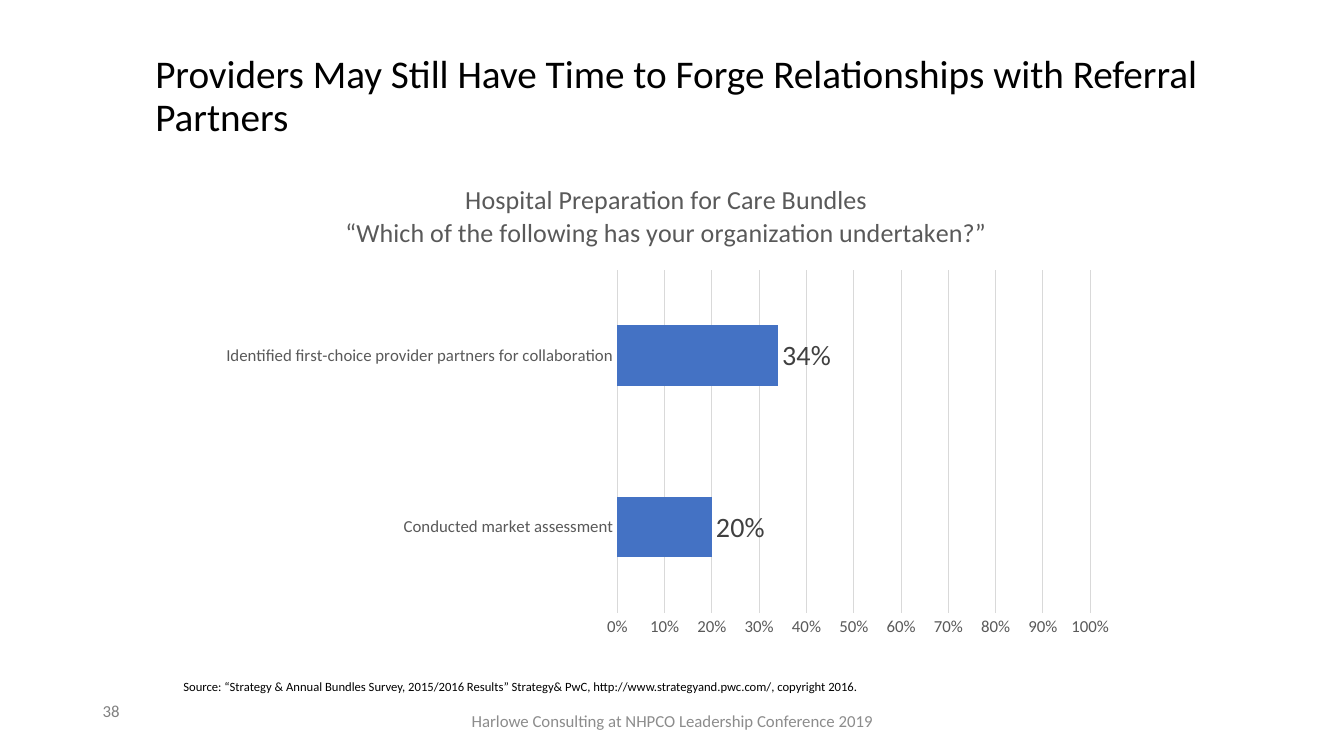
import pptx
import pptx.chart.data
import pptx.dml.color
import pptx.enum.chart
import pptx.enum.text
import pptx.oxml
import pptx.oxml.ns
import pptx.util
from pptx.util import Inches

COLORS = {
    "black": "000000",
    "bar": "4472C4",
    "grid": "D9D9D9",
    "axis": "595959",
    "label": "404040",
    "number": "808080",
    "footer": "8C8C8C",
}
PREPARATION = {
    "Conducted market assessment": 0.2,
    "Identified first-choice provider partners for collaboration": 0.34,
}
CHART_TITLE = (
    "Hospital Preparation for Care Bundles\n"
    "“Which of the following has your organization undertaken?”"
)
SOURCE = (
    "Source: “Strategy & Annual Bundles Survey, 2015/2016 Results” "
    "Strategy& PwC, http://www.strategyand.pwc.com/, copyright 2016."
)
PLOT_LAYOUT = {"x": 0.446, "y": 0.212, "w": 0.521, "h": 0.687}
ALIGN = pptx.enum.text.PP_ALIGN
ANCHOR = pptx.enum.text.MSO_ANCHOR
CHART = pptx.enum.chart


def rgb(name):
    return pptx.dml.color.RGBColor.from_string(COLORS[name])


def set_all(target, values):
    for name, value in values.items():
        setattr(target, name, value)


def style_font(font, size, color):
    set_all(font, {"name": "Calibri", "size": pptx.util.Pt(size), "bold": False})
    font.color.rgb = rgb(color)


def style_line(line, color):
    line.color.rgb = rgb(color)
    line.width = pptx.util.Pt(0.75)


def place(shape, left, top, width, height):
    set_all(shape, {"left": Inches(left), "top": Inches(top),
                    "width": Inches(width), "height": Inches(height)})


def fill_text(shape, text, size, color, align=ALIGN.LEFT, anchor=ANCHOR.TOP, spacing=1.0):
    frame = shape.text_frame
    set_all(frame, {"text": text, "word_wrap": True, "vertical_anchor": anchor,
                    "auto_size": pptx.enum.text.MSO_AUTO_SIZE.NONE})
    para = frame.paragraphs[0]
    set_all(para, {"alignment": align, "line_spacing": spacing})
    style_font(para.runs[0].font, size, color)


def add_text(page, area, text, size, color, **layout):
    box = page.shapes.add_textbox(*map(Inches, area))
    fill_text(box, text, size, color, **layout)


def set_plot_layout(chart):
    """Fix the inner plot area as fractions of the chart frame."""
    plot_area = chart.plots[0]._element.getparent()
    for old in plot_area.findall(pptx.oxml.ns.qn("c:layout")):
        plot_area.remove(old)
    values = {"layoutTarget": "inner", "xMode": "edge", "yMode": "edge", **PLOT_LAYOUT}
    parts = "".join(f'<c:{name} val="{value}"/>' for name, value in values.items())
    plot_area.insert(0, pptx.oxml.parse_xml(
        f'<c:layout {pptx.oxml.ns.nsdecls("c")}>'
        f"<c:manualLayout>{parts}</c:manualLayout></c:layout>"))


def style_axes(chart):
    for axis in (chart.category_axis, chart.value_axis):
        set_all(axis, {"major_tick_mark": CHART.XL_TICK_MARK.NONE,
                       "minor_tick_mark": CHART.XL_TICK_MARK.NONE})
        style_font(axis.tick_labels.font, 12, "axis")
    style_line(chart.category_axis.format.line, "grid")
    values = chart.value_axis
    set_all(values, {"minimum_scale": 0, "maximum_scale": 1, "major_unit": 0.1,
                     "has_major_gridlines": True})
    set_all(values.tick_labels, {"number_format": "0%", "number_format_is_linked": False})
    style_line(values.major_gridlines.format.line, "grid")
    values.format.line.fill.background()


def style_bars(plot):
    set_all(plot, {"gap_width": 182, "vary_by_categories": False, "has_data_labels": True})
    fill = plot.series[0].format.fill
    fill.solid()
    fill.fore_color.rgb = rgb("bar")
    labels = plot.data_labels
    set_all(labels, {"show_value": True, "number_format": "0%",
                     "number_format_is_linked": False,
                     "position": CHART.XL_LABEL_POSITION.OUTSIDE_END})
    style_font(labels.font, 20, "label")


def add_preparation_chart(page):
    data = pptx.chart.data.CategoryChartData(number_format="0%")
    data.categories = list(PREPARATION)
    data.add_series("Series 1", list(PREPARATION.values()))
    area = map(Inches, (2.11, 1.63, 9, 4.95))
    chart = page.shapes.add_chart(CHART.XL_CHART_TYPE.BAR_CLUSTERED, *area, data).chart
    set_all(chart, {"has_legend": False, "has_title": True})
    style_font(chart.font, 10, "black")
    chart.chart_title.include_in_layout = False
    frame = chart.chart_title.text_frame
    frame.text = CHART_TITLE
    for para in frame.paragraphs:
        style_font(para.font, 18.6, "axis")
        style_font(para.runs[0].font, 18.6, "axis")
    style_axes(chart)
    style_bars(chart.plots[0])
    set_plot_layout(chart)


def main():
    deck = pptx.Presentation()
    set_all(deck, {"slide_width": Inches(13.33), "slide_height": Inches(7.5)})
    page = deck.slides.add_slide(deck.slide_layouts.get_by_name("Title Only"))
    title = page.shapes.title
    place(title, 1.44, 0.31, 10.97, 1.31)
    fill_text(title, "Providers May Still Have Time to Forge Relationships with Referral Partners",
              28, "black", anchor=ANCHOR.MIDDLE, spacing=0.9)
    add_preparation_chart(page)
    add_text(page, (0.92, 6.9, 3, 0.4), "38", 12, "number")
    add_text(page, (1.72, 6.69, 8.92, 0.25), SOURCE, 9, "black")
    add_text(page, (4.42, 6.95, 4.5, 0.4),
             "Harlowe Consulting at NHPCO Leadership Conference 2019",
             12, "footer", align=ALIGN.CENTER, anchor=ANCHOR.MIDDLE)
    deck.save("out.pptx")


if __name__ == "__main__":
    main()
